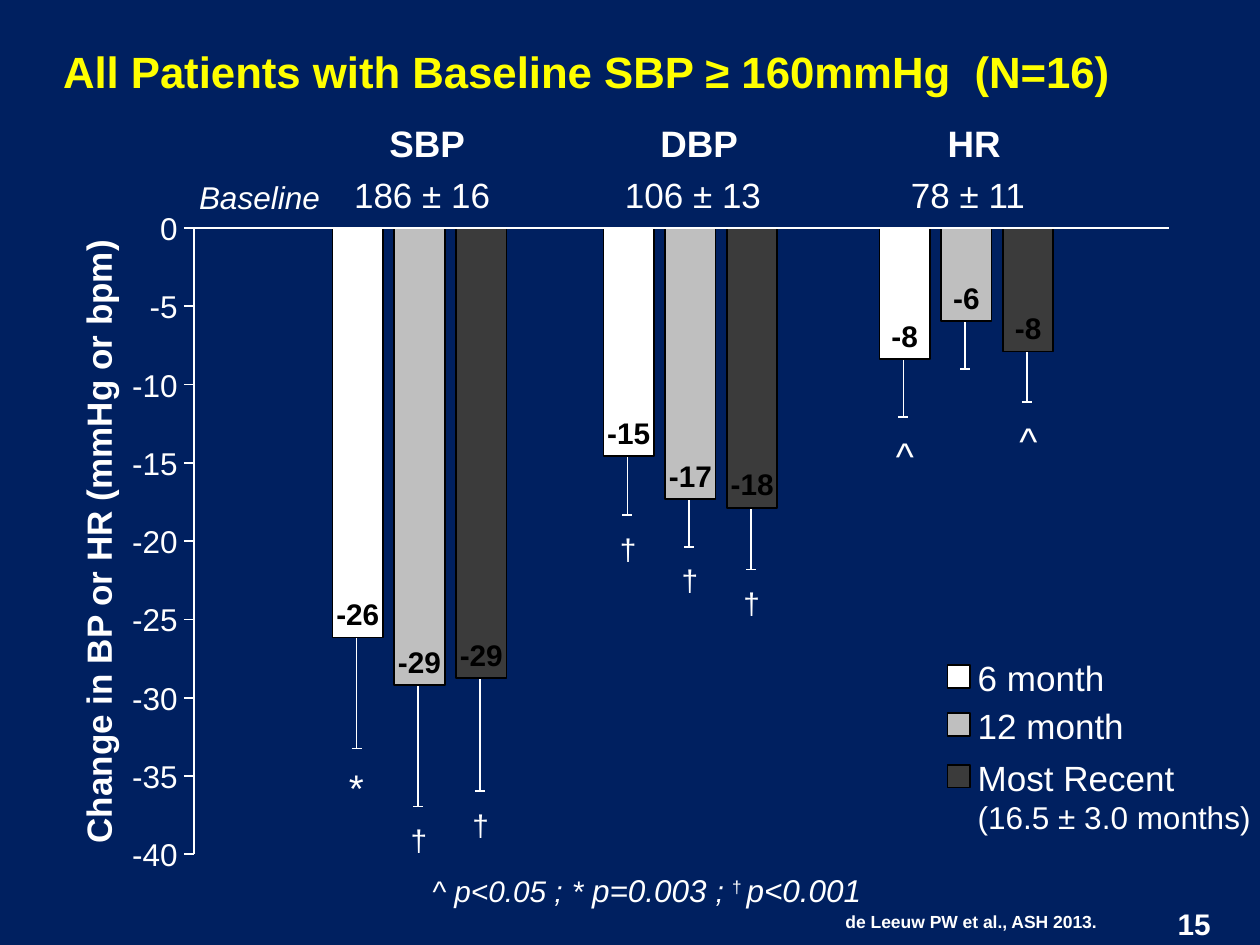
from dataclasses import dataclass

from lxml.etree import SubElement
from pptx import Presentation
from pptx.dml.color import RGBColor
from pptx.enum.shapes import MSO_CONNECTOR as Connector, MSO_SHAPE as Shape
from pptx.enum.text import MSO_ANCHOR as Anchor, MSO_AUTO_SIZE as AutoSize, PP_ALIGN as Align
from pptx.oxml.ns import qn
from pptx.util import Inches, Pt


@dataclass(frozen=True)
class Theme:
    font: str = "Arial"
    background: str = "002060"
    title: str = "FFFF00"
    light: str = "FFFFFF"
    dark: str = "000000"
    series: tuple = ("FFFFFF", "BFBFBF", "3B3B3B")
    title_size: int = 25
    heading_size: int = 21
    body_size: int = 20
    tick_size: int = 18
    label_size: int = 17
    symbol_size: int = 22
    source_size: int = 10


THEME = Theme()
NO_INSET = (0, 0)
INSET = (0.09, 0.04)

AXIS_X, ZERO_Y, AXIS_BOTTOM = 1.54, 1.81, 6.78
TICK_VALUES = range(0, -41, -5)
BAR_WIDTH, BAR_STEP = 0.4, 0.49

# Outcome, heading left, baseline, baseline left, first bar left, bars.
# Each bar: change shown, bar height, whisker end, significance mark.
OUTCOMES = [
    ("SBP", 3.09, "186 ± 16", 2.81, 2.64,
     [("-26", 3.25, 5.94, "*"), ("-29", 3.63, 6.4, "†"), ("-29", 3.57, 6.28, "†")]),
    ("DBP", 5.24, "106 ± 13", 4.96, 4.79,
     [("-15", 1.81, 4.09, "†"), ("-17", 2.15, 4.34, "†"), ("-18", 2.22, 4.52, "†")]),
    ("HR", 7.52, "78 ± 11", 7.23, 6.98,
     [("-8", 1.04, 3.31, "^"), ("-6", 0.74, 2.93, ""), ("-8", 0.98, 3.19, "^")]),
]


def rgb(color):
    return RGBColor.from_string(color)


def write_text(frame, paragraphs, size=THEME.body_size, color=THEME.light, bold=False,
               italic=False, align=Align.LEFT, inset=NO_INSET, wrap=True, anchor=Anchor.TOP):
    """Fill a frame; each paragraph is a list of (text, overrides) runs."""
    frame.auto_size = AutoSize.NONE
    frame.word_wrap = wrap
    frame.vertical_anchor = anchor
    frame.margin_left = frame.margin_right = Inches(inset[0])
    frame.margin_top = frame.margin_bottom = Inches(inset[1])
    for index, runs in enumerate(paragraphs):
        paragraph = frame.add_paragraph() if index else frame.paragraphs[0]
        paragraph.alignment = align
        for text, overrides in runs:
            run = paragraph.add_run()
            run.text = text
            run.font.name = THEME.font
            run.font.size = Pt(overrides.get("size", size))
            run.font.bold = bold
            run.font.italic = overrides.get("italic", italic)
            run.font.color.rgb = rgb(color)
            if "baseline" in overrides:
                run._r.get_or_add_rPr().set("baseline", str(overrides["baseline"] * 1000))


def add_text(slide, box, content, rotation=0, **text_format):
    """Place text, given as one string or as paragraphs of runs."""
    holder = slide.shapes.add_textbox(*map(Inches, box))
    holder.rotation = rotation
    paragraphs = [[(content, {})]] if isinstance(content, str) else content
    write_text(holder.text_frame, paragraphs, **text_format)


def add_line(slide, start, end, width=1):
    line = slide.shapes.add_connector(Connector.STRAIGHT, *map(Inches, (*start, *end)))
    line.line.color.rgb = rgb(THEME.light)
    line.line.width = Pt(width)
    SubElement(line._element.spPr, qn("a:effectLst"))


def add_block(slide, box, color):
    block = slide.shapes.add_shape(Shape.RECTANGLE, *map(Inches, box))
    block.shadow.inherit = False
    block.fill.solid()
    block.fill.fore_color.rgb = rgb(color)
    block.line.color.rgb = rgb(THEME.dark)
    block.line.width = Pt(1)


def add_title(slide, text):
    title = slide.shapes.title
    title.left, title.top, title.width, title.height = map(Inches, (0.41, 0.34, 9.5, 0.48))
    write_text(title.text_frame, [[(text, {})]], size=THEME.title_size, color=THEME.title,
               bold=True, inset=INSET, anchor=Anchor.BOTTOM)
    title.text_frame.paragraphs[0].line_spacing = 0.9


def add_bar(slide, left, color, change, height, whisker_end, mark):
    bottom = ZERO_Y + height
    center = left + BAR_WIDTH / 2 - 0.01
    add_line(slide, (center, bottom), (center, whisker_end))
    add_line(slide, (center - 0.04, whisker_end), (center + 0.04, whisker_end))
    add_block(slide, (left, ZERO_Y, BAR_WIDTH, height), color)
    add_text(slide, (left - 0.1, bottom - 0.37, 0.6, 0.38), change, size=THEME.label_size,
             color=THEME.dark, bold=True, align=Align.CENTER, inset=INSET)
    if mark:
        size = THEME.label_size if mark == "†" else THEME.symbol_size
        add_text(slide, (left + 0.04, whisker_end + 0.08, 0.4, 0.4), mark,
                 size=size, inset=INSET)


def add_outcome(slide, name, name_left, baseline, baseline_left, first_bar, bars):
    add_text(slide, (name_left, 0.96, 0.62, 0.35), name, size=THEME.heading_size,
             bold=True, wrap=False)
    add_text(slide, (baseline_left, 1.38, 1.05, 0.34), baseline, wrap=False)
    for index, (bar, color) in enumerate(zip(bars, THEME.series)):
        add_bar(slide, first_bar + index * BAR_STEP, color, *bar)


def add_axes(slide):
    add_line(slide, (AXIS_X, ZERO_Y), (AXIS_X, AXIS_BOTTOM), width=1.5)
    add_line(slide, (AXIS_X - 0.08, ZERO_Y), (9.28, ZERO_Y), width=1.5)
    gap = (AXIS_BOTTOM - ZERO_Y) / (len(TICK_VALUES) - 1)
    for index, value in enumerate(TICK_VALUES):
        y = ZERO_Y + index * gap
        if value:
            add_line(slide, (AXIS_X - 0.08, y), (AXIS_X, y))
        add_text(slide, (1.01, y - 0.15, 0.4, 0.3), str(value), size=THEME.tick_size,
                 align=Align.RIGHT)
    add_text(slide, (-1.83, 4.09, 5.22, 0.42), "Change in BP or HR (mmHg or bpm)",
             rotation=270, bold=True, align=Align.CENTER, inset=INSET)


def add_legend(slide):
    entries = [
        (5.21, 1.01, [[("6 month", {})]]),
        (5.59, 1.17, [[("12 month", {})]]),
        (6.0, 2.19, [[("Most Recent", {})],
                     [("(16.5 ± 3.0 months)", {"size": THEME.tick_size})]]),
    ]
    for (top, width, label), color in zip(entries, THEME.series):
        add_block(slide, (7.52, top + 0.07, 0.18, 0.18), color)
        add_text(slide, (7.76, top, width, 0.34 * len(label)), label, wrap=False)


def add_footnotes(slide):
    large = {"size": THEME.tick_size}
    significance = [("^ p<0.05 ;", {}), (" ", large), ("*", {}), (" p=0.003 ", large),
                    ("; ", {}), ("† ", {"italic": False, "baseline": 30}), ("p<0.001", large)]
    add_text(slide, (3.43, 6.91, 3.49, 0.3), [significance], size=THEME.label_size,
             italic=True, wrap=False)
    add_text(slide, (6.62, 7.19, 2.2, 0.26), "de Leeuw PW et al., ASH 2013.",
             size=THEME.source_size, bold=True, inset=INSET, wrap=False)
    add_text(slide, (9.31, 7.19, 0.3, 0.29), "15", size=THEME.label_size, bold=True,
             align=Align.RIGHT)


def main():
    deck = Presentation()
    deck.slide_width, deck.slide_height = Inches(10), Inches(7.5)
    slide = deck.slides.add_slide(deck.slide_layouts.get_by_name("Title Only"))
    slide.background.fill.solid()
    slide.background.fill.fore_color.rgb = rgb(THEME.background)

    add_title(slide, "All Patients with Baseline SBP ≥ 160mmHg  (N=16)")
    add_text(slide, (1.58, 1.41, 1.03, 0.3), "Baseline", size=THEME.tick_size,
             italic=True, wrap=False)
    for outcome in OUTCOMES:
        add_outcome(slide, *outcome)
    add_axes(slide)
    add_legend(slide)
    add_footnotes(slide)
    deck.save("out.pptx")


if __name__ == "__main__":
    main()
